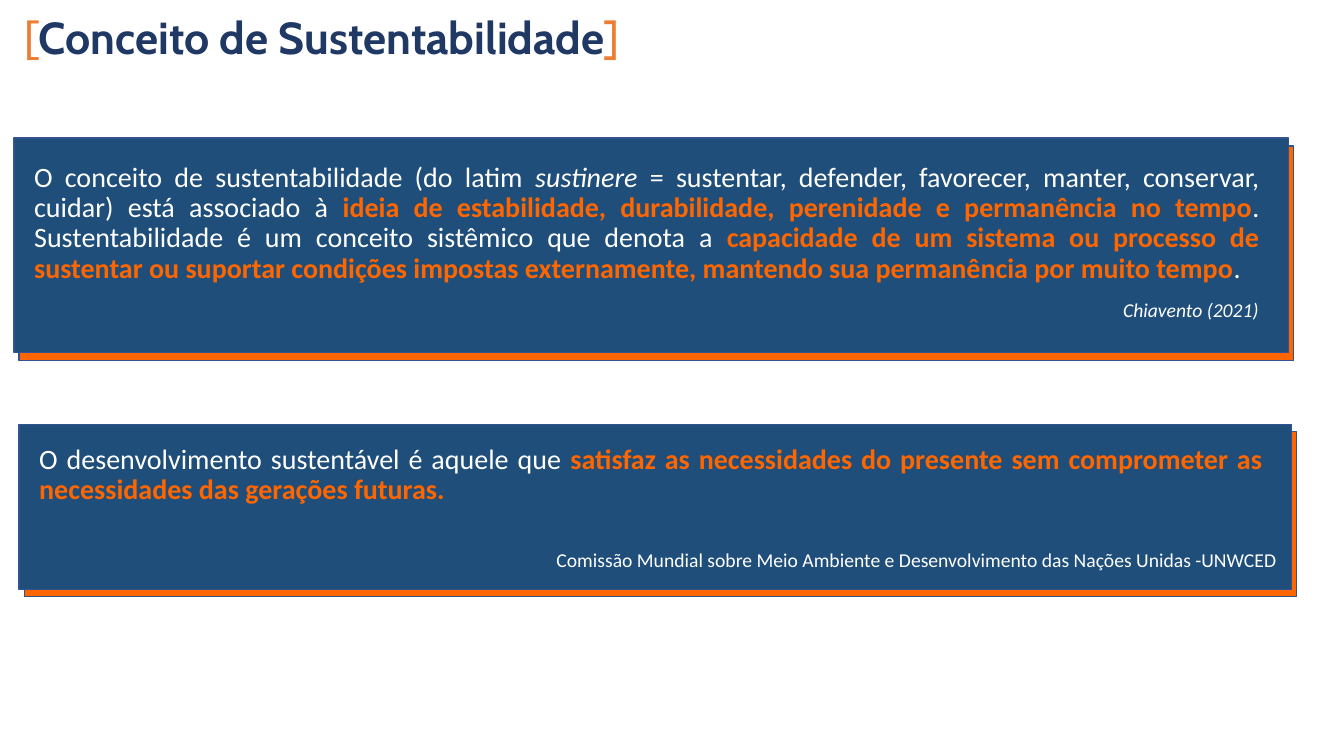
from pptx import Presentation
from pptx.dml.color import RGBColor
from pptx.enum.shapes import MSO_SHAPE
from pptx.enum.text import PP_ALIGN
from pptx.util import Inches, Pt

NAVY = RGBColor(0x1F, 0x38, 0x64)
BLUE = RGBColor(0x1E, 0x4E, 0x79)
EDGE = RGBColor(0x31, 0x53, 0x8F)
ORANGE = RGBColor(0xFF, 0x66, 0x00)
BRACKET = RGBColor(0xED, 0x7D, 0x31)
WHITE = RGBColor(0xFF, 0xFF, 0xFF)

PLAIN = {"name": "Calibri", "size": Pt(20)}
STRONG = {**PLAIN, "bold": True}
ITALIC = {**PLAIN, "italic": True}
SOURCE = {"name": "Calibri", "size": Pt(14)}
TITLE = {"name": "Cabin", "size": Pt(32)}

HEADING = [
    ("[", BRACKET, TITLE),
    ("Conceito de Sustentabilidade", NAVY, {**TITLE, "bold": True}),
    ("]", BRACKET, TITLE),
]

CARDS = [
    {
        "panel": (0.14, 1.37, 12.64, 2.13),
        "shadow_drop": 0.08,
        "texts": [
            ((0.24, 1.57, 12.35, 1.31), [
                ("O conceito de sustentabilidade (do latim ", WHITE, PLAIN),
                ("sustinere", WHITE, ITALIC),
                (" = sustentar, defender, favorecer, manter, conservar, cuidar) está associado à ", WHITE, PLAIN),
                ("ideia de estabilidade, durabilidade, perenidade e permanência no tempo", ORANGE, STRONG),
                (". Sustentabilidade é um conceito sistêmico que denota a ", WHITE, PLAIN),
                ("capacidade de um sistema ou processo de sustentar ou suportar condições impostas "
                 "externamente, mantendo sua permanência por muito tempo", ORANGE, STRONG),
                (".", WHITE, PLAIN),
            ]),
            ((11.04, 2.93, 1.74, 0.47), [
                ("Chiavento (2021)", WHITE, {**SOURCE, "italic": True}),
            ]),
        ],
    },
    {
        "panel": (0.19, 4.21, 12.62, 1.64),
        "shadow_drop": 0.07,
        "texts": [
            ((0.29, 4.37, 12.33, 0.71), [
                ("O desenvolvimento sustentável é aquele que ", WHITE, PLAIN),
                ("satisfaz as necessidades do presente sem comprometer as necessidades das "
                 "gerações futuras.", ORANGE, STRONG),
            ]),
            ((5.42, 5.41, 7.49, 0.31), [
                ("Comissão Mundial sobre Meio Ambiente e Desenvolvimento das Nações Unidas -UNWCED",
                 WHITE, SOURCE),
            ]),
        ],
    },
]
SHADOW_SHIFT = 0.05


def add_text(shapes, box, runs, **layout):
    tf = shapes.add_textbox(*map(Inches, box)).text_frame
    tf.word_wrap = True
    p = tf.paragraphs[0]
    for key, value in layout.items():
        setattr(p, key, value)
    for text, color, style in runs:
        r = p.add_run()
        r.text = text
        r.font.color.rgb = color
        for key, value in style.items():
            setattr(r.font, key, value)


def add_panel(shapes, box, fill):
    sp = shapes.add_shape(MSO_SHAPE.RECTANGLE, *map(Inches, box))
    sp.shadow.inherit = False
    sp.fill.solid()
    sp.fill.fore_color.rgb = fill
    sp.line.color.rgb = EDGE
    sp.line.width = Pt(1)


def add_card(s, card):
    shapes = s.shapes.add_group_shape().shapes
    x, y, w, h = card["panel"]
    add_panel(shapes, (x + SHADOW_SHIFT, y + card["shadow_drop"], w, h), ORANGE)
    add_panel(shapes, card["panel"], BLUE)
    for box, runs in card["texts"]:
        add_text(shapes, box, runs, alignment=PP_ALIGN.JUSTIFY, line_spacing=0.9)


def main():
    prs = Presentation()
    prs.slide_width, prs.slide_height = Inches(13.33), Inches(7.5)
    s = prs.slides.add_slide(prs.slide_layouts[6])
    add_text(s.shapes, (0.14, 0.05, 9.46, 0.64), HEADING)
    for card in CARDS:
        add_card(s, card)
    prs.save("out.pptx")


if __name__ == "__main__":
    main()
